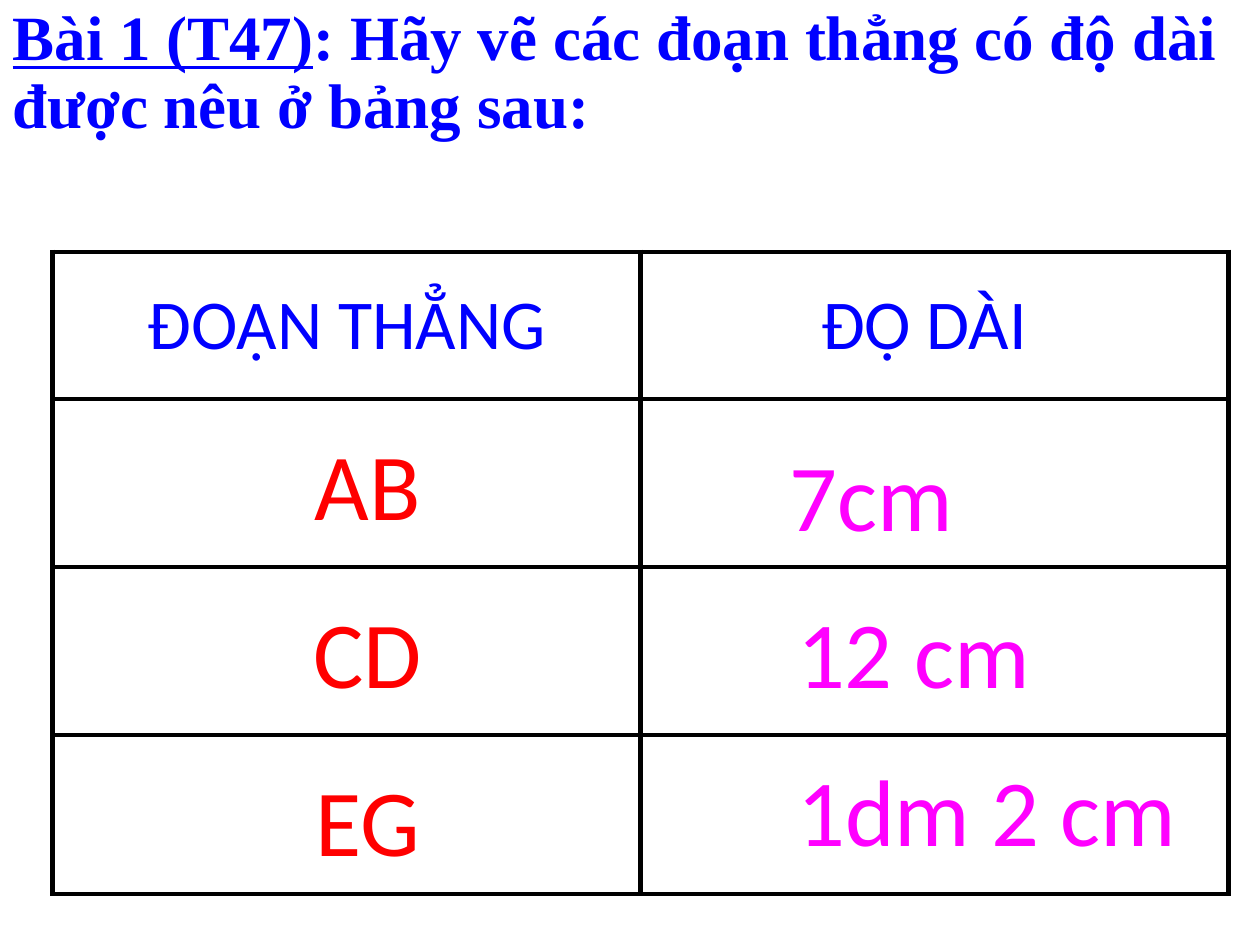
from lxml import etree
from pptx import Presentation
from pptx.dml.color import RGBColor
from pptx.enum import text
from pptx.oxml import ns
from pptx.util import Pt

COLORS = {"blue": "0000FF", "red": "FF0000", "pink": "FF00FF", "border": "000000"}


def style_run(span, font, size, color):
    span.font.name = font
    span.font.size = Pt(size)
    span.font.color.rgb = RGBColor.from_string(COLORS[color])


def add_borders(cell, width, color):
    """Draw a solid line on all four sides of a table cell."""
    properties = cell._tc.get_or_add_tcPr()
    for position, side in enumerate(("a:lnL", "a:lnR", "a:lnT", "a:lnB")):
        line = etree.Element(ns.qn(side), w=str(Pt(width)))
        fill = etree.SubElement(line, ns.qn("a:solidFill"))
        etree.SubElement(fill, ns.qn("a:srgbClr"), val=COLORS[color])
        properties.insert(position, line)


deck = Presentation()
deck.slide_width, deck.slide_height = Pt(720), Pt(540)
page = deck.slides.add_slide(deck.slide_layouts[1])
title = page.shapes.title
title.element.getparent().remove(title.element)

# Exercise statement
statement = page.placeholders[1]
statement.left, statement.top = Pt(0), Pt(0)
statement.width, statement.height = Pt(720), Pt(96)
statement.text_frame.auto_size = text.MSO_AUTO_SIZE.NONE
para = statement.text_frame.paragraphs[0]
para.line_spacing = 0.9
paragraph_properties = para._p.get_or_add_pPr()
paragraph_properties.set("marL", "0")
paragraph_properties.set("indent", "0")
etree.SubElement(paragraph_properties, ns.qn("a:buNone"))
for words, underlined in (
    ("Bài 1 (T47)", True),
    (": Hãy vẽ các đoạn thẳng có độ dài được nêu ở bảng sau:", False),
):
    span = para.add_run()
    span.text = words
    style_run(span, "Times New Roman", 36, "blue")
    span.font.bold = True
    span.font.underline = underlined

# Table grid
row_heights = (84, 96, 96, 91)
frame = page.shapes.add_table(4, 2, Pt(30), Pt(144), Pt(672), Pt(sum(row_heights)))
table = frame.table
table.first_row = table.horz_banding = False
for row, height in zip(table.rows, row_heights):
    row.height = Pt(height)
for cell in table.iter_cells():
    cell.fill.background()
    add_borders(cell, 3, "border")

# Labels over the grid: words, left, top, width, height, size, color
labels = (
    ("ĐOẠN THẲNG", 42, 156, 312, 55.5, 40, "blue"),
    ("ĐỘ DÀI", 378, 156, 300, 55.5, 40, "blue"),
    ("AB", 150, 240, 120, 72, 54, "red"),
    ("CD", 150, 336, 120, 72, 54, "red"),
    ("EG", 144, 432, 132, 72, 54, "red"),
    ("7cm", 432, 246, 132, 72, 54, "pink"),
    ("12 cm", 426, 336, 192, 72, 54, "pink"),
    ("1dm 2 cm", 438, 426, 252, 72, 54, "pink"),
)
for words, left, top, width, height, size, color in labels:
    box = page.shapes.add_textbox(Pt(left), Pt(top), Pt(width), Pt(height))
    box.text_frame.word_wrap = True
    box.text_frame.auto_size = text.MSO_AUTO_SIZE.SHAPE_TO_FIT_TEXT
    para = box.text_frame.paragraphs[0]
    para.text = words
    para.alignment = text.PP_ALIGN.CENTER
    style_run(para.runs[0], "Calibri", size, color)

deck.save("out.pptx")
